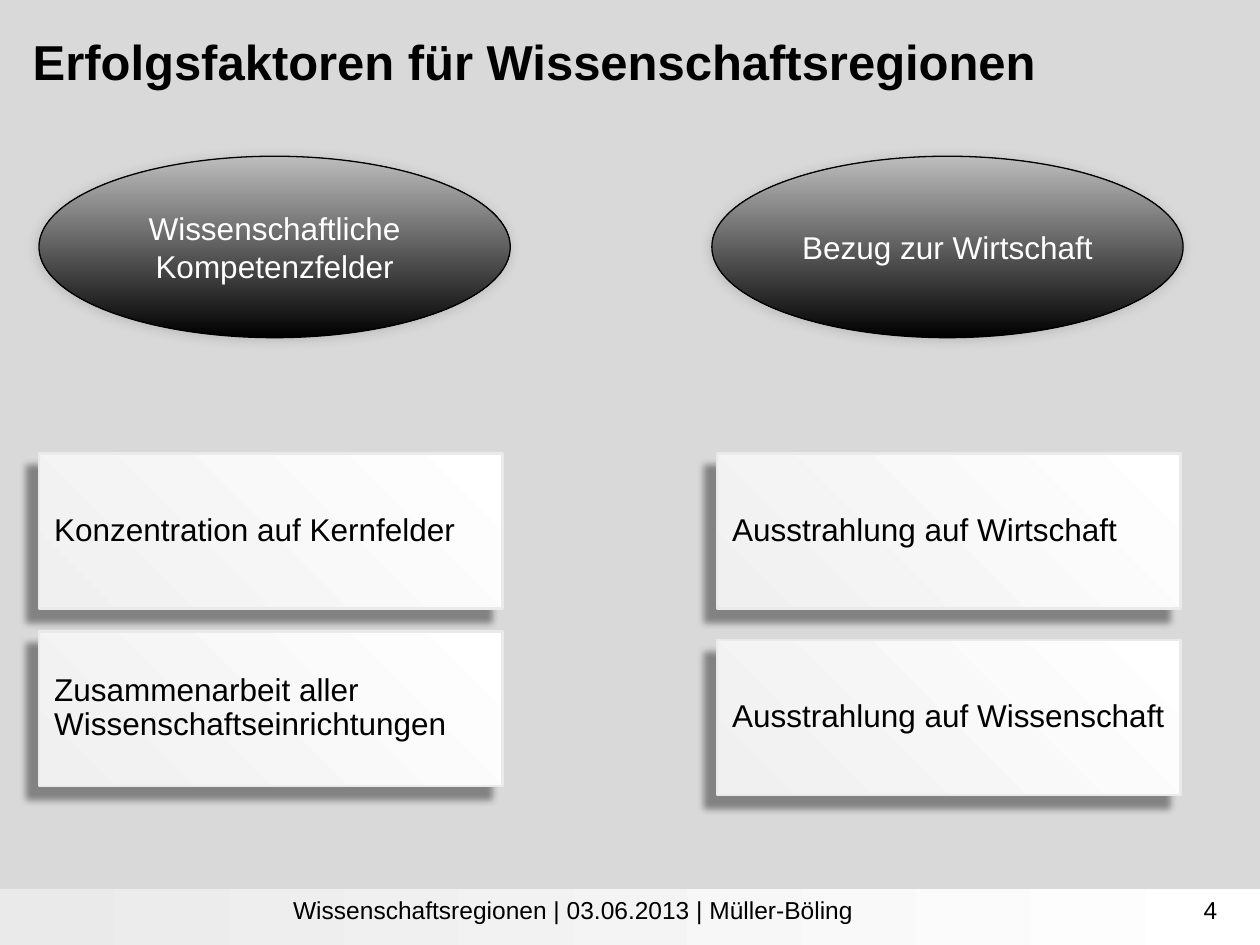
from lxml.etree import SubElement
from pptx import Presentation
from pptx.dml.color import RGBColor
from pptx.enum.shapes import MSO_SHAPE
from pptx.enum.text import MSO_ANCHOR, MSO_AUTO_SIZE, PP_ALIGN
from pptx.oxml.ns import qn
from pptx.util import Inches, Pt

COLUMNS, ROWS = 100, 75


def color(value):
    return RGBColor.from_string(value)


class SlideBuilder:
    font = "Arial"
    ink = "000000"

    def __init__(self, deck):
        self.column = deck.slide_width / COLUMNS
        self.row = deck.slide_height / ROWS
        self.slide = deck.slides.add_slide(deck.slide_layouts[5])
        background = self.slide.background.fill
        background.solid()
        background.fore_color.rgb = color("D9D9D9")

    def place(self, left, top, width, height):
        return [round(left * self.column), round(top * self.row),
                round(width * self.column), round(height * self.row)]

    def add_text(self, frame, text, size, ink=ink, bold=False,
                 align=PP_ALIGN.LEFT, anchor=MSO_ANCHOR.TOP):
        frame.word_wrap = True
        frame.auto_size = MSO_AUTO_SIZE.NONE
        frame.vertical_anchor = anchor
        paragraph = frame.paragraphs[0]
        paragraph.alignment = align
        run = paragraph.add_run()
        run.text = text
        run.font.name, run.font.size, run.font.bold = self.font, Pt(size), bold
        run.font.color.rgb = color(ink)
        return paragraph

    def title(self, area, text):
        heading = self.slide.shapes.title
        heading.left, heading.top, heading.width, heading.height = self.place(*area)
        heading.text_frame.margin_top = Inches(0.09)
        self.add_text(heading.text_frame, text, 28, bold=True)

    def label(self, area, text, align):
        box = self.slide.shapes.add_textbox(*self.place(*area))
        self.add_text(box.text_frame, text, 14, align=align)

    def panel(self, kind, area, gradient, angle, outline=None, shadow=None):
        """Gradient shape; outline is (colour, width), shadow is (opacity, blur, distance)."""
        panel = self.slide.shapes.add_shape(kind, *self.place(*area))
        panel.fill.gradient()
        panel.fill.gradient_angle = angle
        for stop, value in zip(panel.fill.gradient_stops, gradient):
            stop.color.rgb = color(value)
        if outline:
            panel.line.color.rgb = color(outline[0])
            panel.line.width = Pt(outline[1])
        else:
            panel.line.fill.background()
        panel.shadow.inherit = False
        if shadow:
            self.drop_shadow(panel, *shadow)
        return panel

    def drop_shadow(self, panel, opacity, blur, distance):
        effects = panel._element.spPr.find(qn("a:effectLst"))
        outer = SubElement(effects, qn("a:outerShdw"), blurRad=str(Pt(blur)),
                           dist=str(Pt(distance)), dir=str(135 * 60000),
                           algn="ctr", rotWithShape="0")
        tint = SubElement(outer, qn("a:srgbClr"), val=self.ink)
        SubElement(tint, qn("a:alpha"), val=str(opacity * 1000))

    def topic(self, left, text):
        oval = self.panel(MSO_SHAPE.OVAL, (left, 12.4, 37.4, 14.4), ("000000", "BDBDBD"),
                          90, ("000000", 0.75), (15, 7, 1))
        self.add_text(oval.text_frame, text, 18, "FFFFFF",
                      align=PP_ALIGN.CENTER, anchor=MSO_ANCHOR.MIDDLE)

    def factor(self, left, top, text):
        card = self.panel(MSO_SHAPE.RECTANGLE, (left, top, 36.8, 12.3), ("F0F0F0", "FFFFFF"),
                          45, ("EAEAEA", 1.5), (40, 4, 10))
        frame = card.text_frame
        frame.margin_left = Inches(0.12)
        frame.margin_right = frame.margin_top = frame.margin_bottom = Inches(0.04)
        paragraph = self.add_text(frame, text, 18, anchor=MSO_ANCHOR.MIDDLE)
        paragraph.line_spacing = 0.9

    def footer(self, text, number):
        self.panel(MSO_SHAPE.RECTANGLE, (0, 70.6, COLUMNS, 4.4), ("FFFFFF", "EAEAEA"), 180)
        self.label((1.6, 70.5, 87.8, 5.2), text, PP_ALIGN.CENTER)
        self.label((74.3, 70.5, 23.3, 5.2), number, PP_ALIGN.RIGHT)


def main():
    deck = Presentation()
    deck.slide_width, deck.slide_height = Inches(10), Inches(7.5)
    page = SlideBuilder(deck)

    # Title and footer
    page.title((1.6, 1.6, 96.2, 7), "Erfolgsfaktoren für Wissenschaftsregionen")
    page.footer("Wissenschaftsregionen | 03.06.2013 | Müller-Böling", "4")

    # Each topic with its success factors: (topic left, topic, factor left, factors by top)
    topics = [
        (3.1, "Wissenschaftliche Kompetenzfelder", 3.1,
         {36: "Konzentration auf Kernfelder",
          50.1: "Zusammenarbeit aller Wissenschaftseinrichtungen"}),
        (56.5, "Bezug zur Wirtschaft", 56.9,
         {36: "Ausstrahlung auf Wirtschaft",
          50.8: "Ausstrahlung auf Wissenschaft"}),
    ]
    for topic_left, topic, factor_left, factors in topics:
        page.topic(topic_left, topic)
        for top, factor in factors.items():
            page.factor(factor_left, top, factor)

    deck.save("out.pptx")


if __name__ == "__main__":
    main()
